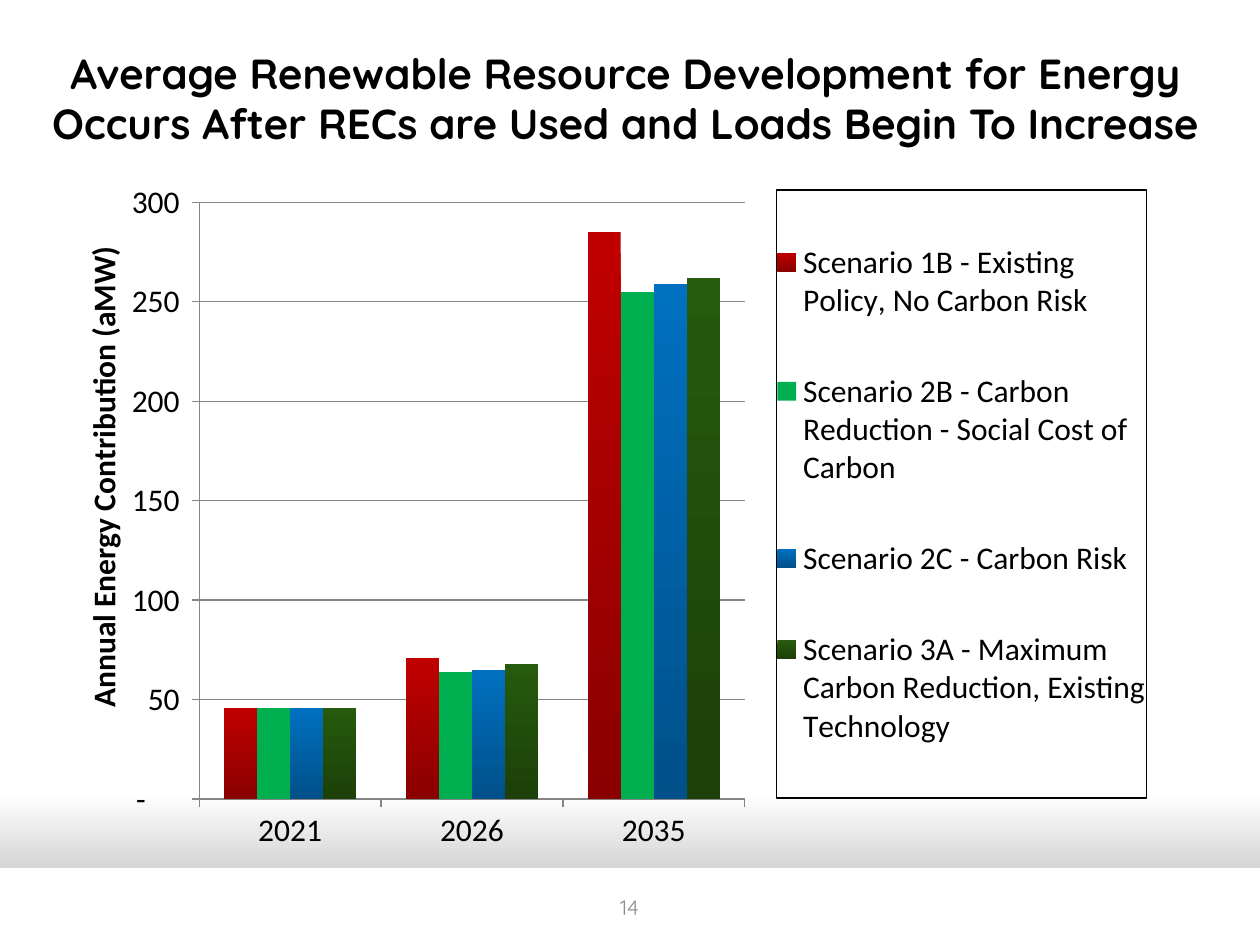
import dataclasses

import lxml.etree
import pptx
import pptx.chart.data
import pptx.dml.color
import pptx.enum.chart
import pptx.enum.text
import pptx.oxml
import pptx.oxml.ns
import pptx.util

Cm = pptx.util.Cm
Pt = pptx.util.Pt
qn = pptx.oxml.ns.qn

YEARS = ["2021", "2026", "2035"]
GRID = "868686"


@dataclasses.dataclass
class Box:
    left: float
    top: float
    width: float
    height: float

    def lengths(self) -> list:
        return [Cm(n) for n in dataclasses.astuple(self)]


@dataclasses.dataclass
class Label:
    box: Box
    text: str
    size: float
    color: str
    bold: bool = False


@dataclasses.dataclass
class Series:
    name: str
    values: list
    top: str
    base: str


LABELS = [
    Label(Box(0.64, 0.76, 23.93, 2.41),
          "Average Renewable Resource Development for Energy "
          "Occurs After RECs are Used and Loads Begin To Increase",
          24, "000000", True),
    Label(Box(9.73, 17.78, 5.92, 1.02), "14", 12, "8C8C8C"),
]

SERIES = [
    Series("Scenario 1B - Existing Policy, No Carbon Risk",
           [46, 71, 285], "C00000", "8A0000"),
    Series("Scenario 2B - Carbon Reduction - Social Cost of Carbon",
           [46, 64, 255], "00B050", "00B050"),
    Series("Scenario 2C - Carbon Risk",
           [46, 65, 259], "0070C0", "00508A"),
    Series("Scenario 3A - Maximum Carbon Reduction, Existing Technology",
           [46, 68, 262], "265A0C", "1C4008"),
]


def rgb(code: str) -> pptx.dml.color.RGBColor:
    return pptx.dml.color.RGBColor.from_string(code)


def shade(fill, top: str, base: str, start: float = 0) -> None:
    """Fill from top to base, downwards."""
    fill.gradient()
    fill.gradient_angle = 270
    for stop, code, place in zip(fill.gradient_stops, (top, base), (start, 1)):
        stop.color.rgb = rgb(code)
        stop.position = place


def write(frame, text: str, size: float, color: str, bold: bool, face: str) -> None:
    run = frame.paragraphs[0].add_run()
    run.text = text
    font = run.font
    font.name, font.size, font.bold = face, Pt(size), bold
    font.color.rgb = rgb(color)


def add_label(slide, label: Label) -> None:
    frame = slide.shapes.add_textbox(*label.box.lengths()).text_frame
    frame.word_wrap = True
    frame.vertical_anchor = pptx.enum.text.MSO_ANCHOR.MIDDLE
    frame.paragraphs[0].alignment = pptx.enum.text.PP_ALIGN.CENTER
    write(frame, label.text, label.size, label.color, label.bold, "Quicksand")


def place(host, inner: bool = False, **spots: float) -> None:
    """Give a chart part a fixed layout, in shares of the chart."""
    for old in host.findall(qn("c:layout")):
        host.remove(old)
    layout = host.makeelement(qn("c:layout"))
    manual = lxml.etree.SubElement(layout, qn("c:manualLayout"))
    marks = {"layoutTarget": "inner"} if inner else {}
    marks.update(xMode="edge", yMode="edge", **spots)
    for tag, value in marks.items():
        lxml.etree.SubElement(manual, qn(f"c:{tag}")).set("val", str(value))
    over = host.find(qn("c:overlay"))
    if over is None:
        host.insert(0, layout)
    else:
        over.addprevious(layout)


def style_axes(chart) -> None:
    cross = pptx.enum.chart.XL_TICK_MARK
    for axis in (chart.category_axis, chart.value_axis):
        axis.major_tick_mark = cross.OUTSIDE
        axis.minor_tick_mark = cross.NONE
        axis.format.line.color.rgb = rgb(GRID)
        axis.format.line.width = Pt(0.75)

    axis = chart.value_axis
    axis.minimum_scale, axis.maximum_scale, axis.major_unit = 0, 300, 50
    axis.tick_labels.number_format = (
        '_(* #,##0_);_(* \\(#,##0\\);_(* "-"??_);_(@_)')
    axis.tick_labels.number_format_is_linked = False
    line = axis.major_gridlines.format.line
    line.color.rgb = rgb(GRID)
    line.width = Pt(0.75)

    title = axis.axis_title
    write(title.text_frame, "Annual Energy Contribution (aMW)",
          18, "000000", True, "Calibri")
    body = title.text_frame._txBody.find(qn("a:bodyPr"))
    body.set("rot", "-5400000")
    body.set("vert", "horz")
    place(title._element, x=0.03, y=0.09)


def style_legend(chart) -> None:
    chart.has_legend = True
    legend = chart.legend
    legend.position = pptx.enum.chart.XL_LEGEND_POSITION.RIGHT
    legend.include_in_layout = False
    legend.font.size = Pt(18)
    place(legend._element, x=0.648, y=0.016, w=0.326, h=0.89)
    frame = pptx.oxml.parse_xml(
        f'<c:spPr {pptx.oxml.ns.nsdecls("c", "a")}><a:ln w="9525"><a:solidFill>'
        '<a:srgbClr val="000000"/></a:solidFill></a:ln></c:spPr>')
    legend._element.find(qn("c:overlay")).addnext(frame)


def add_bars(slide, box: Box) -> None:
    data = pptx.chart.data.CategoryChartData()
    data.categories = YEARS
    for item in SERIES:
        data.add_series(item.name, item.values)
    kind = pptx.enum.chart.XL_CHART_TYPE.COLUMN_CLUSTERED
    chart = slide.shapes.add_chart(kind, *box.lengths(), data).chart
    chart.has_title = False
    chart.font.name, chart.font.size = "Calibri", Pt(18)
    chart.font.color.rgb = rgb("000000")

    plot = chart.plots[0]
    plot.vary_by_categories = False
    plot.gap_width, plot.overlap = 150, 0
    for bars, item in zip(plot.series, SERIES):
        if item.top == item.base:
            bars.format.fill.solid()
            bars.format.fill.fore_color.rgb = rgb(item.top)
        else:
            shade(bars.format.fill, item.top, item.base)
    style_axes(chart)
    style_legend(chart)
    area = chart._chartSpace.find(f'.//{qn("c:plotArea")}')
    place(area, True, x=0.139, y=0.034, w=0.481, h=0.874)


def main() -> None:
    deck = pptx.Presentation()
    deck.slide_width, deck.slide_height = Cm(25.4), Cm(19.05)
    slide = deck.slides.add_slide(deck.slide_layouts[6])

    # Backdrop and footer band
    shade(slide.background.fill, "FFFFFF", "A6A6A6", 0.84)
    band = slide.shapes.add_shape(
        pptx.enum.shapes.MSO_SHAPE.RECTANGLE, *Box(0, 17.5, 25.4, 1.55).lengths())
    band.shadow.inherit = False
    band.fill.solid()
    band.fill.fore_color.rgb = rgb("FFFFFF")
    band.line.fill.background()

    # Chart, then title and page number
    add_bars(slide, Box(0.84, 3.61, 22.86, 13.77))
    for label in LABELS:
        add_label(slide, label)
    deck.save("out.pptx")


if __name__ == "__main__":
    main()
